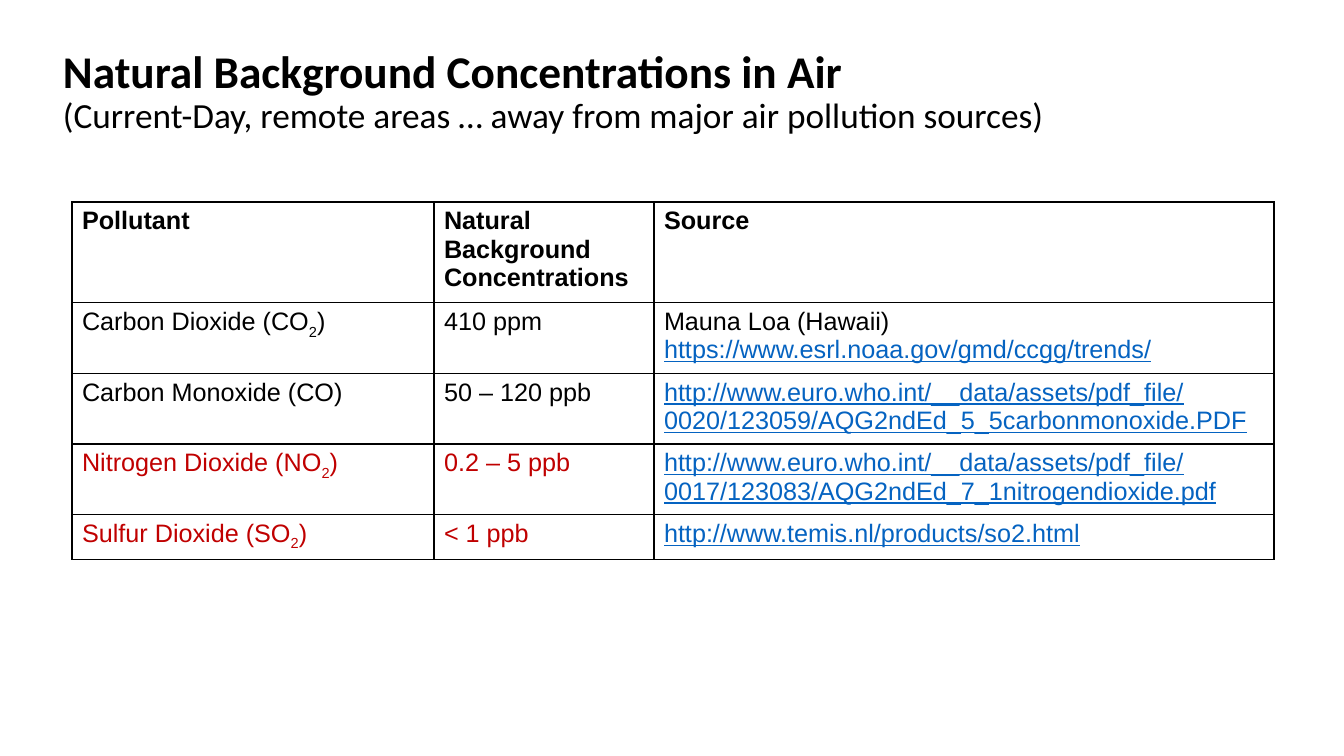
from pptx import Presentation
from pptx.dml.color import RGBColor
from pptx.enum.text import MSO_ANCHOR as Anchor
from pptx.oxml import parse_xml
from pptx.util import Pt

BLACK, RED, BLUE, WHITE = "000000", "C00000", "0563C1", "FFFFFF"
TITLE = [
    ("Natural Background Concentrations in Air", 32.4, True),
    ("(Current-Day, remote areas … away from major air pollution sources)", 25.2, False),
]
HEAD = ["Pollutant", "Natural Background Concentrations", "Source"]
ROWS = [
    ("Carbon Dioxide (CO₂)", "410 ppm",
     ["Mauna Loa (Hawaii)", "https://www.esrl.noaa.gov/gmd/ccgg/trends/"], BLACK),
    ("Carbon Monoxide (CO)", "50 – 120 ppb",
     ["http://www.euro.who.int/__data/assets/pdf_file/0020/123059/AQG2ndEd_5_5carbonmonoxide.PDF"], BLACK),
    ("Nitrogen Dioxide (NO₂)", "0.2 – 5 ppb",
     ["http://www.euro.who.int/__data/assets/pdf_file/0017/123083/AQG2ndEd_7_1nitrogendioxide.pdf"], RED),
    ("Sulfur Dioxide (SO₂)", "< 1 ppb",
     ["http://www.temis.nl/products/so2.html"], RED),
]
WIDTHS = [362, 220, 620]
HEIGHTS = [94, 66, 66, 66, 42]
SPACE = "http://schemas.openxmlformats.org/drawingml/2006/main"


def px(num):
    return round(num * 914400 / 100.8)


def paint(text):
    return RGBColor.from_string(text)


def style(font, face, size, color, bold):
    font.name, font.size, font.bold = face, Pt(size), bold
    font.color.rgb = paint(color)


def write(par, text, color, bold):
    link = text.startswith("http")
    style(par.font, "Arial", 18, BLUE if link else color, bold)
    par.font.underline = link
    for part in text.replace("₂", "|₂|").split("|"):
        run = par.add_run()
        run.text = part.replace("₂", "2")
        style(run.font, "Arial", 18, BLUE if link else color, bold)
        run.font.underline = link
        if part == "₂":
            run._r.get_or_add_rPr().set("baseline", "-25000")


def border(cell):
    props = cell._tc.get_or_add_tcPr()
    for spot, side in enumerate("LRTB"):
        props.insert(spot, parse_xml(
            f'<a:ln{side} xmlns:a="{SPACE}" w="12700"><a:solidFill>'
            f'<a:srgbClr val="{BLACK}"/></a:solidFill></a:ln{side}>'))


def fill(cell, lines, color, bold):
    cell.fill.solid()
    cell.fill.fore_color.rgb = paint(WHITE)
    border(cell)
    frame = cell.text_frame
    for spot, line in enumerate(lines):
        par = frame.add_paragraph() if spot else frame.paragraphs[0]
        write(par, line, color, bold)


def main():
    deck = Presentation()
    deck.slide_width, deck.slide_height = px(1344), px(756)
    slide = deck.slides.add_slide(deck.slide_layouts[6])

    frame = slide.shapes.add_textbox(px(53), px(42), px(1159), px(101)).text_frame
    frame.word_wrap = True
    frame.vertical_anchor = Anchor.MIDDLE
    par = frame.paragraphs[0]
    par.line_spacing = 0.9
    for spot, (text, size, bold) in enumerate(TITLE):
        if spot:
            par.add_line_break()
        run = par.add_run()
        run.text = text
        style(run.font, "Calibri", size, BLACK, bold)

    table = slide.shapes.add_table(len(HEIGHTS), len(WIDTHS), px(72), px(202),
                                   px(sum(WIDTHS)), px(sum(HEIGHTS))).table
    table.first_row = table.horz_banding = False
    for col, width in zip(table.columns, WIDTHS):
        col.width = px(width)
    for row, height in zip(table.rows, HEIGHTS):
        row.height = px(height)
    for col, text in enumerate(HEAD):
        fill(table.cell(0, col), [text], BLACK, True)
    for row, (name, level, source, color) in enumerate(ROWS, 1):
        for col, lines in enumerate([[name], [level], source]):
            fill(table.cell(row, col), lines, color, False)

    deck.save("out.pptx")


if __name__ == "__main__":
    main()
